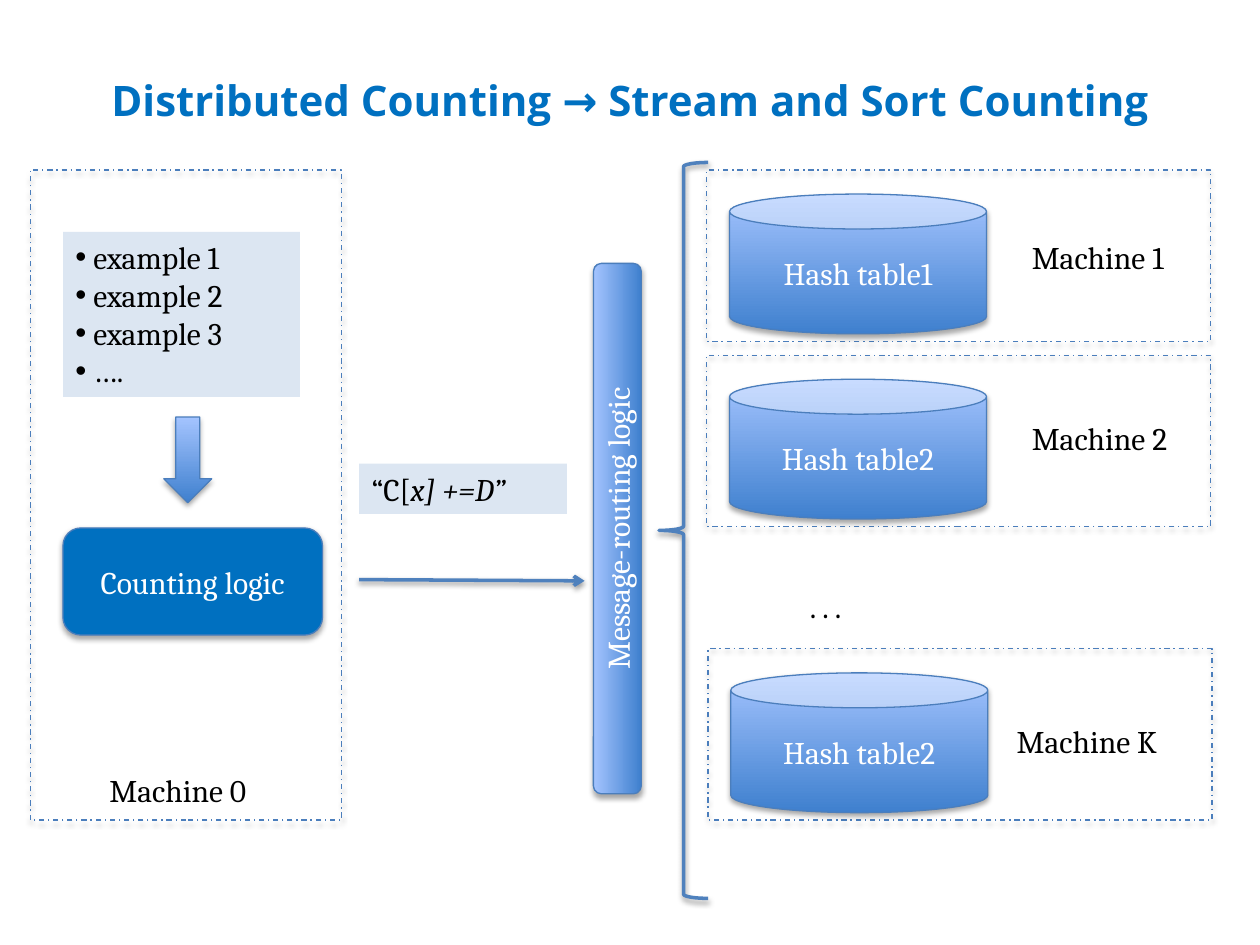
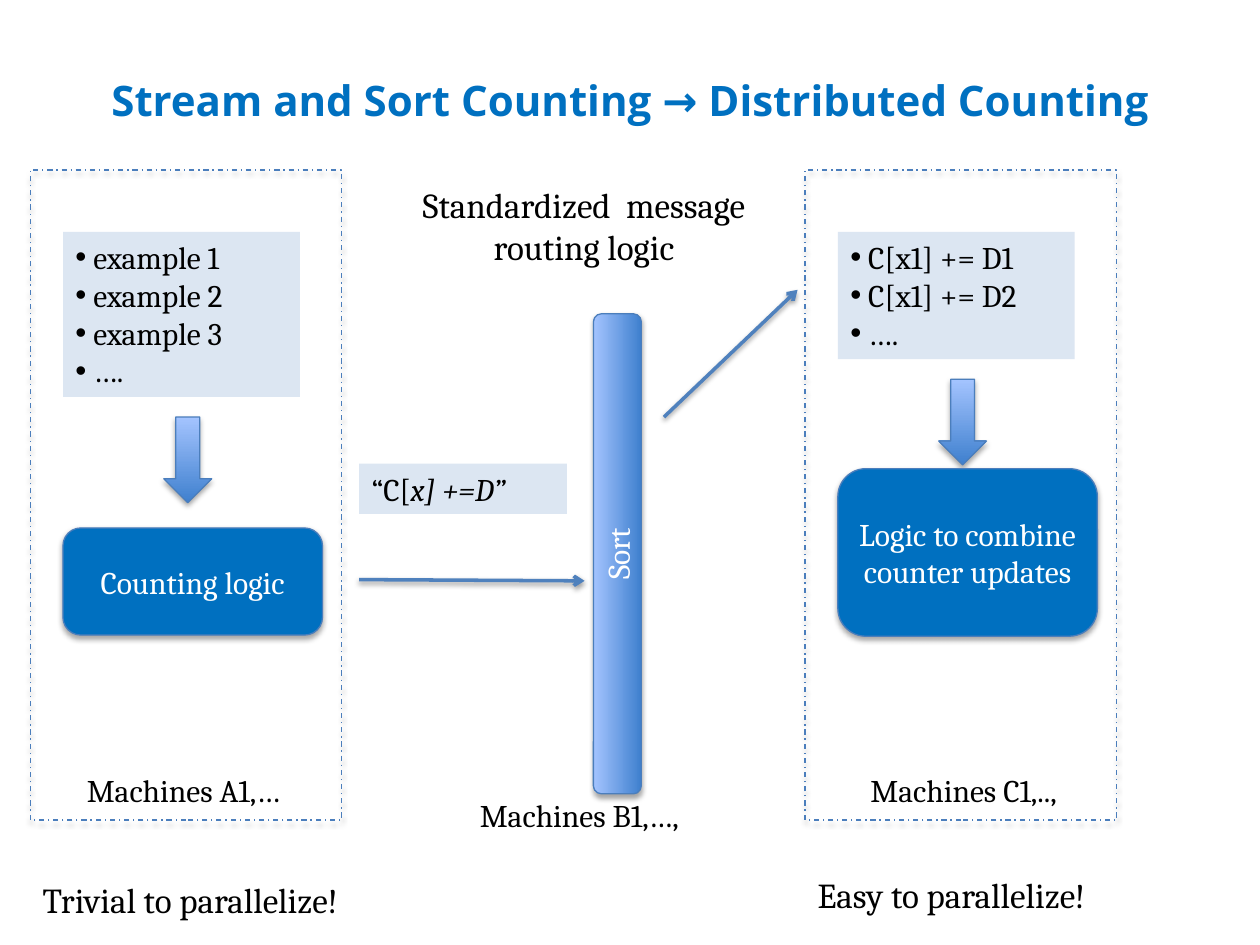
from lxml.etree import SubElement
from pptx import Presentation
from pptx.dml.color import RGBColor
from pptx.enum.dml import MSO_LINE
from pptx.enum.shapes import MSO_CONNECTOR, MSO_SHAPE as SHAPE
from pptx.enum.text import MSO_ANCHOR as ANCHOR, PP_ALIGN as ALIGN
from pptx.oxml.ns import qn
from pptx.util import Inches, Pt

COLORS = {
    "title": "0070C0",
    "solid": "0070C0",
    "note": "DCE6F2",
    "edge": "4B7EBC",
    "stroke": "4F81BD",
    "dark": "3F80CE",
    "light": "A4C4FF",
    "black": "000000",
    "white": "FFFFFF",
}
PALETTE = {name: RGBColor.from_string(value) for name, value in COLORS.items()}
raised = []


def write(box, text, size=18, color="black", align=ALIGN.LEFT, anchor=ANCHOR.TOP, bullets=False):
    frame = box.text_frame
    frame.word_wrap = True
    frame.vertical_anchor = anchor
    frame.text = text
    for para in frame.paragraphs:
        para.alignment = align
        for span in para.runs:
            span.font.size = Pt(size)
            span.font.name = "Cambria"
            span.font.color.rgb = PALETTE[color]
        if bullets:
            props = para._p.get_or_add_pPr()
            SubElement(props, qn("a:buFont")).set("typeface", "Arial")
            SubElement(props, qn("a:buChar")).set("char", "•")


def add_box(page, kind, at, look, text=""):
    box = page.shapes.add_shape(kind, *map(Inches, at))
    if look == "note":
        box.shadow.inherit = False
        box.line.fill.background()
    else:
        box.line.color.rgb = PALETTE["stroke" if look == "brace" else "edge"]
        box.line.width = Pt(2 if look == "brace" else 0.75)
        raised.append(box)
    if look in ("note", "solid"):
        box.fill.solid()
        box.fill.fore_color.rgb = PALETTE[look]
    elif look == "gradient":
        box.fill.gradient()
        box.fill.gradient_angle = 90
        for stop, name in zip(box.fill.gradient_stops, ("dark", "light")):
            stop.color.rgb = PALETTE[name]
            stop.position = 0 if name == "dark" else 1
    else:
        box.fill.background()
    if look == "frame":
        box.line.dash_style = MSO_LINE.DASH_DOT
    if look in ("solid", "gradient") and text:
        write(box, text, color="white", align=ALIGN.CENTER, anchor=ANCHOR.MIDDLE)
    elif text:
        write(box, text, bullets="\n" in text)
    return box


deck = Presentation()
deck.slide_width, deck.slide_height = Inches(10), Inches(7.5)

titles = [
    "Distributed Counting → Stream and Sort Counting",
    "Stream and Sort Counting → Distributed Counting",
]
routers = [("Message-routing logic", 4.21), ("Sort", 3.81)]
arrows = [
    [(2.85, 4.6, 4.64, 4.61)],
    [(2.85, 4.6, 4.64, 4.61), (5.27, 3.31, 6.33, 2.3)],
]
labels = [
    [
        ("Machine 0", 0.77, 6.07, 1.36, 0.4, 18, ALIGN.LEFT),
        ("Machine 1", 8.09, 1.84, 1.35, 0.4, 18, ALIGN.LEFT),
        ("Machine 2", 8.09, 3.28, 1.35, 0.4, 18, ALIGN.LEFT),
        ("Machine K", 7.97, 5.68, 1.48, 0.4, 18, ALIGN.LEFT),
        (". . .", 6.33, 4.61, 0.52, 0.4, 18, ALIGN.LEFT),
    ],
    [
        ("Machines A1,…", 0.59, 6.07, 1.98, 0.4, 18, ALIGN.LEFT),
        ("Machines B1,…,", 3.71, 6.27, 2, 0.4, 18, ALIGN.LEFT),
        ("Machines C1,..,", 6.81, 6.07, 1.9, 0.4, 18, ALIGN.LEFT),
        ("Trivial to parallelize!", 0.24, 6.92, 3.32, 0.44, 20, ALIGN.LEFT),
        ("Easy to parallelize!", 6.39, 6.88, 2.61, 0.44, 20, ALIGN.LEFT),
        ("Standardized  message routing logic", 3.19, 1.41, 2.89, 0.77, 20, ALIGN.CENTER),
    ],
]
counting = (0.24, " example 1\n example 2\n example 3\n ….", 1.31, 3.31, "Counting logic", 4.19, 0.85)
combining = (6.39, " C[x1] += D1\n C[x1] += D2\n ….", 1.01, 3.01, "Logic to combine counter updates", 3.72, 1.33)
machines = [[counting], [counting, combining]]
hash_tables = [[("Hash table1", 5.61, 1.35), ("Hash table2", 5.61, 2.82), ("Hash table2", 5.62, 5.15)], []]

for number, title_text in enumerate(titles):
    page = deck.slides.add_slide(deck.slide_layouts[5])
    title = page.shapes.title
    title.left, title.top, title.width, title.height = map(Inches, (0.5, 0.3, 9, 0.99))
    write(title, title_text, 24, "title", ALIGN.CENTER, ANCHOR.MIDDLE)
    title_font = title.text_frame.paragraphs[0].runs[0].font
    title_font.name = "Open Sans"
    title_font.bold = True

    for left, items, items_height, arrow_top, logic, logic_top, logic_height in machines[number]:
        add_box(page, SHAPE.RECTANGLE, (left, 1.35, 2.47, 5.16), "frame")
        add_box(page, SHAPE.RECTANGLE, (left + 0.26, 1.84, 1.88, items_height), "note", items)
        add_box(page, SHAPE.DOWN_ARROW, (left + 1.06, arrow_top, 0.38, 0.68), "gradient")
        add_box(page, SHAPE.ROUNDED_RECTANGLE, (left + 0.26, logic_top, 2.06, logic_height), "solid", logic)

    for name, left, top in hash_tables[number]:
        add_box(page, SHAPE.RECTANGLE, (left, top, 4, 1.36), "frame")
        add_box(page, SHAPE.CAN, (left + 0.18, top + 0.19, 2.04, 1.11), "gradient", name)
    if hash_tables[number]:
        add_box(page, SHAPE.LEFT_BRACE, (5.23, 1.29, 0.39, 5.84), "brace")

    message = add_box(page, SHAPE.RECTANGLE, (2.85, 3.68, 1.65, 0.4), "note", "“C[")
    span = message.text_frame.paragraphs[0].add_run()
    span.text = "x] +=D”"
    span.font.size = Pt(18)
    span.font.name = "Cambria"
    span.font.italic = True
    span.font.color.rgb = PALETTE["black"]

    router_text, length = routers[number]
    router_at = (4.9 - length / 2, 6.11 - length / 2, length, 0.38)
    router = add_box(page, SHAPE.ROUNDED_RECTANGLE, router_at, "gradient", router_text)
    router.rotation = 270

    for ends in arrows[number]:
        arrow = page.shapes.add_connector(MSO_CONNECTOR.STRAIGHT, *map(Inches, ends))
        arrow.line.color.rgb = PALETTE["stroke"]
        arrow.line.width = Pt(2)
        SubElement(arrow.line._get_or_add_ln(), qn("a:tailEnd")).set("type", "arrow")
        raised.append(arrow)

    for text, left, top, width, height, size, align in labels[number]:
        label = page.shapes.add_textbox(*map(Inches, (left, top, width, height)))
        write(label, text, size, align=align)

for item in raised:
    heavy = item.line.width == Pt(2)
    effects = SubElement(item._element.spPr, qn("a:effectLst"))
    shadow = SubElement(effects, qn("a:outerShdw"))
    shadow.set("blurRad", str(Pt(3.1)))
    shadow.set("dist", str(Pt(1.6 if heavy else 1.8)))
    shadow.set("dir", "5400000")
    shadow.set("rotWithShape", "0")
    tint = SubElement(shadow, qn("a:srgbClr"))
    tint.set("val", COLORS["black"])
    SubElement(tint, qn("a:alpha")).set("val", "38000" if heavy else "35000")

deck.save("out.pptx")
